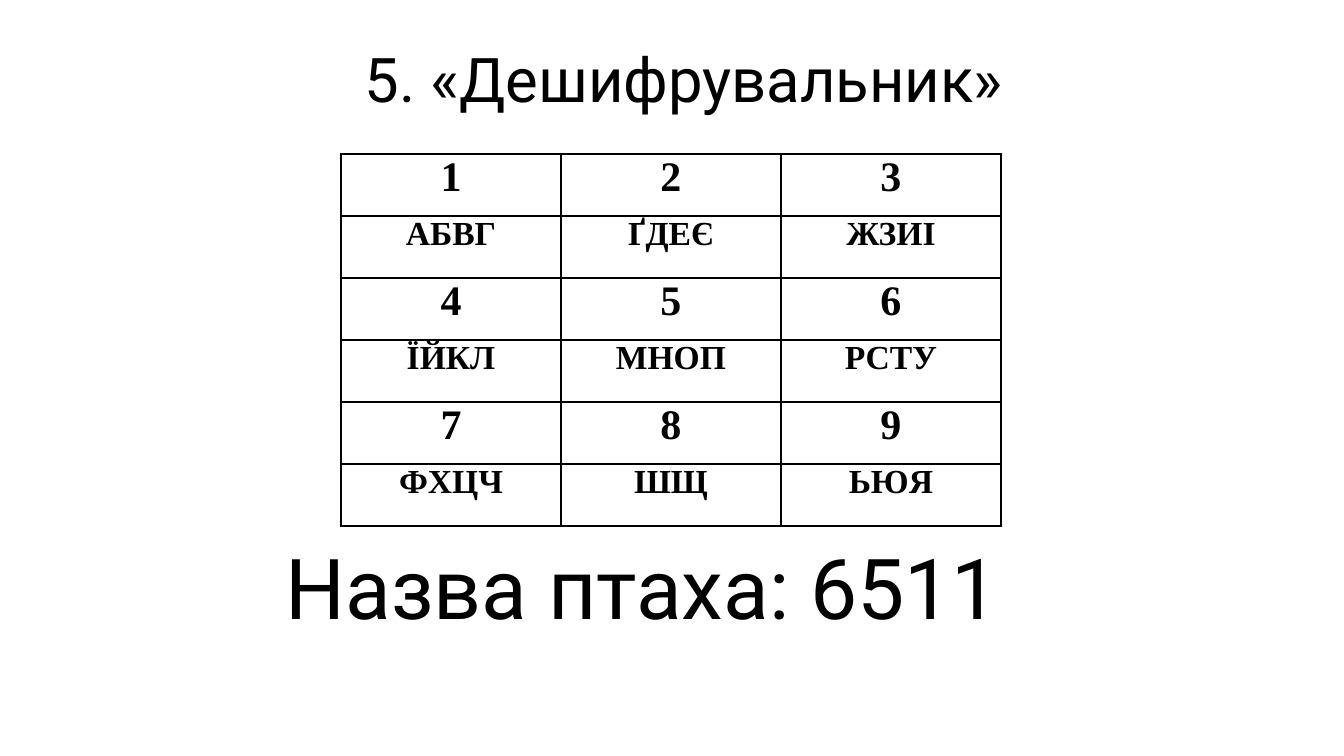
from lxml import etree
from pptx import Presentation, util as u
from pptx.dml.color import RGBColor
from pptx.enum import text
from pptx.oxml import ns

PX = u.Inches(1) / 100.8
theme = {
    "ink": "000000", "sans": "Roboto", "serif": "Times New Roman",
    "title": 44, "body": 60, "digit": 30, "code": 24, "line": 1,
}


def px(*vals):
    return [u.Emu(round(v * PX)) for v in vals]


def write(frame, words, size, font, bold=False, space=None):
    para = frame.paragraphs[0]
    para.alignment = text.PP_ALIGN.CENTER
    para.line_spacing = space
    run = para.add_run()
    run.text = words
    run.font.name = font
    run.font.size = u.Pt(size)
    run.font.bold = bold
    run.font.color.rgb = RGBColor.from_string(theme["ink"])


prs = Presentation()
prs.slide_width, prs.slide_height = px(1344, 756)
slide = prs.slides.add_slide(prs.slide_layouts[6])

labels = [
    ("5. «Дешифрувальник»", "title", (92, 22, 1184, 99), text.MSO_ANCHOR.BOTTOM),
    ("Назва птаха: 6511 ", "body", (197, 542, 912, 132), text.MSO_ANCHOR.TOP),
]
for words, role, area, anchor in labels:
    frame = slide.shapes.add_textbox(*px(*area)).text_frame
    frame.word_wrap = True
    frame.vertical_anchor = anchor
    write(frame, words, theme[role], theme["sans"], space=0.9)

rows = [
    ("1", "2", "3"), ("АБВГ", "ҐДЕЄ", "ЖЗИІ"),
    ("4", "5", "6"), ("ЇЙКЛ", "МНОП", "РСТУ"),
    ("7", "8", "9"), ("ФХЦЧ", "ШЩ", "ЬЮЯ"),
]
grid = slide.shapes.add_table(6, 3, *px(341, 154, 660, 372)).table
grid.first_row = grid.horz_banding = False
for r, row in enumerate(rows):
    size = theme["code" if r % 2 else "digit"]
    for c, words in enumerate(row):
        cell = grid.cell(r, c)
        cell.margin_left, cell.margin_right = px(7, 7)
        cell.margin_top = cell.margin_bottom = 0
        write(cell.text_frame, words, size, theme["serif"], bold=True)
        props = cell._tc.get_or_add_tcPr()
        for side in ("lnL", "lnR", "lnT", "lnB"):
            line = etree.SubElement(props, ns.qn("a:" + side), w=str(u.Pt(theme["line"])))
            fill = etree.SubElement(line, ns.qn("a:solidFill"))
            etree.SubElement(fill, ns.qn("a:srgbClr"), val=theme["ink"])
        cell.fill.background()

prs.save("out.pptx")
